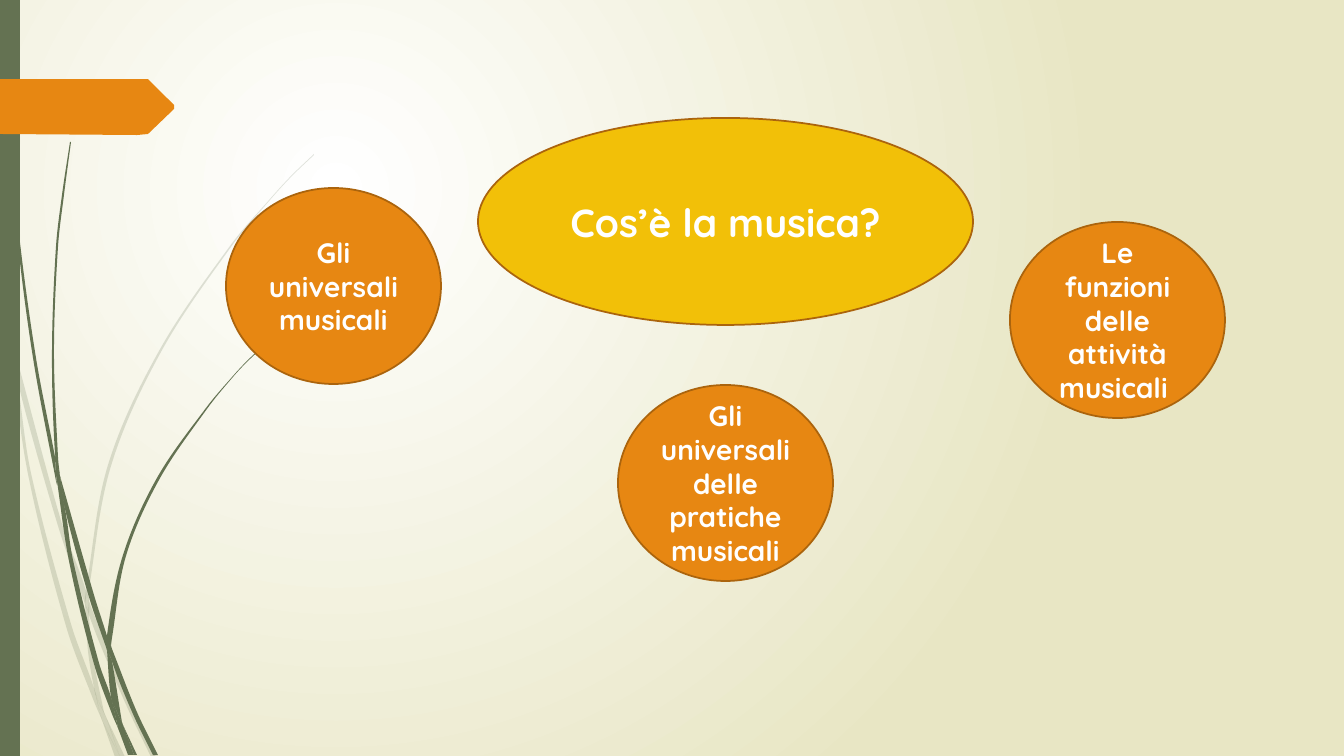
import math

import pptx
import pptx.dml.color
import pptx.enum.shapes
import pptx.enum.text
import pptx.oxml
import pptx.oxml.ns
import pptx.util
from lxml import etree

W, H = 1344, 756
PX = 12192000 / W
SHARP = 0.8  # cosine of the turn below which an outline point is a corner

COLORS = {
    "white": "FFFFFF",
    "cream": "E8E6C4",
    "green": "647252",
    "orange": "E78712",
    "brown": "AB640D",
    "yellow": "F2C008",
}

# Outline points of the pieces of grass
FADED_GRASS = [
    [(11, 353), (9, 325), (0, 284), (0, 301), (10, 347)],
    [(58, 526), (85, 604), (86, 591), (62, 524), (14, 348), (17, 379)],
    [(93, 612), (89, 601), (89, 615), (124, 700), (151, 757), (156, 757), (128, 698)],
    [(120, 757), (125, 757), (106, 717)],
    [(94, 688), (71, 624), (31, 473), (17, 379), (11, 353), (28, 474), (66, 626),
     (93, 699), (102, 720), (100, 713)],
    [(85, 604), (88, 651), (94, 688), (97, 698), (106, 717), (104, 712), (92, 651),
     (89, 615), (89, 613)],
    [(89, 589), (111, 466), (161, 352), (231, 247), (270, 200), (292, 176),
     (314, 155), (314, 154), (291, 176), (270, 199), (230, 246), (159, 351),
     (108, 465), (86, 589), (86, 591), (89, 601)],
    [(102, 720), (115, 757), (120, 757)],
    [(89, 613), (89, 615), (89, 601), (86, 591), (85, 604)],
    [(97, 698), (94, 688), (100, 713), (102, 720), (120, 757), (106, 717)],
]
DARK_GRASS = [
    [(7, 111), (17, 235), (33, 358), (56, 481), (57, 485), (55, 461), (55, 457),
     (36, 358), (19, 234), (8, 110), (5, 48), (4, 0), (3, 0), (4, 48)],
    [(89, 597), (107, 650), (107, 638), (107, 636), (94, 595), (60, 476), (65, 509)],
    [(114, 654), (111, 646), (112, 661), (133, 714), (153, 755), (158, 755), (137, 712)],
    [(111, 697), (99, 663), (73, 560), (65, 509), (57, 481), (69, 561), (94, 664),
     (112, 714), (118, 728), (117, 723)],
    [(60, 476), (58, 457), (54, 352), (58, 247), (64, 195), (71, 142), (70, 142),
     (62, 195), (56, 247), (52, 352), (55, 453)],
    [(134, 755), (137, 755), (123, 725)],
    [(57, 481), (65, 509), (60, 476), (55, 453), (55, 457)],
    [(112, 638), (126, 556), (159, 480), (207, 409), (233, 377), (247, 362),
     (263, 347), (262, 347), (247, 361), (233, 376), (206, 408), (157, 478),
     (123, 555), (107, 636), (111, 646)],
    [(118, 728), (128, 755), (132, 755)],
    [(107, 650), (111, 697), (117, 712), (123, 725), (122, 722), (112, 661), (110, 656)],
    [(107, 636), (107, 650), (110, 656), (112, 661), (111, 646)],
    [(117, 712), (111, 697), (117, 723), (118, 728), (131, 755), (134, 755), (123, 725)],
]
TAG = [(174, 109), (148, 134), (137, 135), (0, 134), (0, 79), (137, 79), (148, 79), (174, 105)]
TOPICS = [
    (618, 385, "Gli universali delle pratiche musicali"),
    (226, 188, "Gli universali musicali"),
    (1010, 222, "Le funzioni delle attività musicali "),
]


def emu(px):
    return pptx.util.Emu(round(px * PX))


def rgb(name):
    return pptx.dml.color.RGBColor.from_string(COLORS[name])


def paint(sp, fill, line=None, alpha=None):
    sp.shadow.inherit = False
    sp.fill.solid()
    sp.fill.fore_color.rgb = rgb(fill)
    if alpha is not None:
        clr = sp.element.spPr.find(".//" + pptx.oxml.ns.qn("a:srgbClr"))
        etree.SubElement(clr, pptx.oxml.ns.qn("a:alpha"), val=str(alpha * 1000))
    if line:
        sp.line.color.rgb = rgb(line)
        sp.line.width = pptx.util.Pt(1.25)
    else:
        sp.line.fill.background()


def direction(a, b):
    length = math.dist(a, b)
    return (b[0] - a[0]) / length, (b[1] - a[1]) / length


def handle(before, at, after, length):
    """Bezier handle that leaves a point towards the next one."""
    (ux, uy), (vx, vy) = direction(before, at), direction(at, after)
    if ux * vx + uy * vy > SHARP:
        vx, vy = direction(before, after)
    return at[0] + vx * length / 3, at[1] + vy * length / 3


def bezier_points(points):
    """Closed smooth outline: two handles and an end for each side."""
    n = len(points)
    result = [points[0]]
    for i in range(n):
        a, b, c, d = (points[(i + k) % n] for k in (-1, 0, 1, 2))
        length = math.dist(b, c)
        result += [handle(a, b, c, length), handle(d, c, b, length), c]
    return result


def add_outline(shapes, points, fill):
    corners = [(emu(x), emu(y)) for x, y in points]
    builder = shapes.build_freeform(*corners[0], scale=1.0)
    builder.add_line_segments(corners[1:], close=True)
    sp = builder.convert_to_shape()
    paint(sp, fill)
    return sp


def add_blade(shapes, points, alpha):
    sp = add_outline(shapes, bezier_points(points), "green")
    paint(sp, "green", alpha=alpha)
    # Join each three straight steps into one curve
    steps = list(sp.element.spPr.iter(pptx.oxml.ns.qn("a:lnTo")))
    for trio in zip(steps[::3], steps[1::3], steps[2::3]):
        curve = etree.Element(pptx.oxml.ns.qn("a:cubicBezTo"))
        trio[0].addprevious(curve)
        for step in trio:
            curve.append(step[0])
            step.getparent().remove(step)


def add_grass(s, blades, alpha=None):
    group = s.shapes.add_group_shape()
    for points in blades:
        add_blade(group.shapes, points, alpha)


def add_preset(s, kind, x, y, w, h, fill, line=None):
    sp = s.shapes.add_shape(kind, emu(x), emu(y), emu(w), emu(h))
    paint(sp, fill, line)
    return sp


def set_text(sp, text, size=20, color="white", bold=True, font="Quicksand"):
    tf = sp.text_frame
    tf.word_wrap = True
    tf.vertical_anchor = pptx.enum.text.MSO_ANCHOR.MIDDLE
    p = tf.paragraphs[0]
    p.alignment = pptx.enum.text.PP_ALIGN.CENTER
    r = p.add_run()
    r.text = text
    r.font.name = font
    r.font.size = pptx.util.Pt(size)
    r.font.bold = bold
    r.font.color.rgb = rgb(color)


def set_background(s):
    fill = s.background.fill
    fill.gradient()
    for stop, name in zip(fill.gradient_stops, ("white", "cream")):
        stop.color.rgb = rgb(name)
    # Turn the linear gradient into a radial one
    grad = s.element.find(".//" + pptx.oxml.ns.qn("a:gradFill"))
    radial = pptx.oxml.parse_xml(
        f'<a:path {pptx.oxml.ns.nsdecls("a")} path="circle">'
        '<a:fillToRect l="50000" t="50000" r="100000" b="100000"/></a:path>')
    grad.replace(grad.find(pptx.oxml.ns.qn("a:lin")), radial)


def main():
    prs = pptx.Presentation()
    prs.slide_width, prs.slide_height = emu(W), emu(H)
    s = prs.slides.add_slide(prs.slide_layouts[6])
    kinds = pptx.enum.shapes.MSO_SHAPE

    # Backdrop: grass, side bar and tag
    set_background(s)
    add_grass(s, FADED_GRASS, alpha=20)
    add_grass(s, DARK_GRASS)
    add_preset(s, kinds.RECTANGLE, 0, 0, 20, H, "green")
    add_outline(s.shapes, TAG, "orange")

    # Topics around the central question
    for x, y, text in TOPICS:
        topic = add_preset(s, kinds.OVAL, x, y, 215, 196, "orange", "brown")
        set_text(topic, text)
    question = add_preset(s, kinds.OVAL, 478, 118, 495, 207, "yellow", "brown")
    set_text(question, "Cos’è la musica?", size=28)

    prs.save("out.pptx")


if __name__ == "__main__":
    main()
